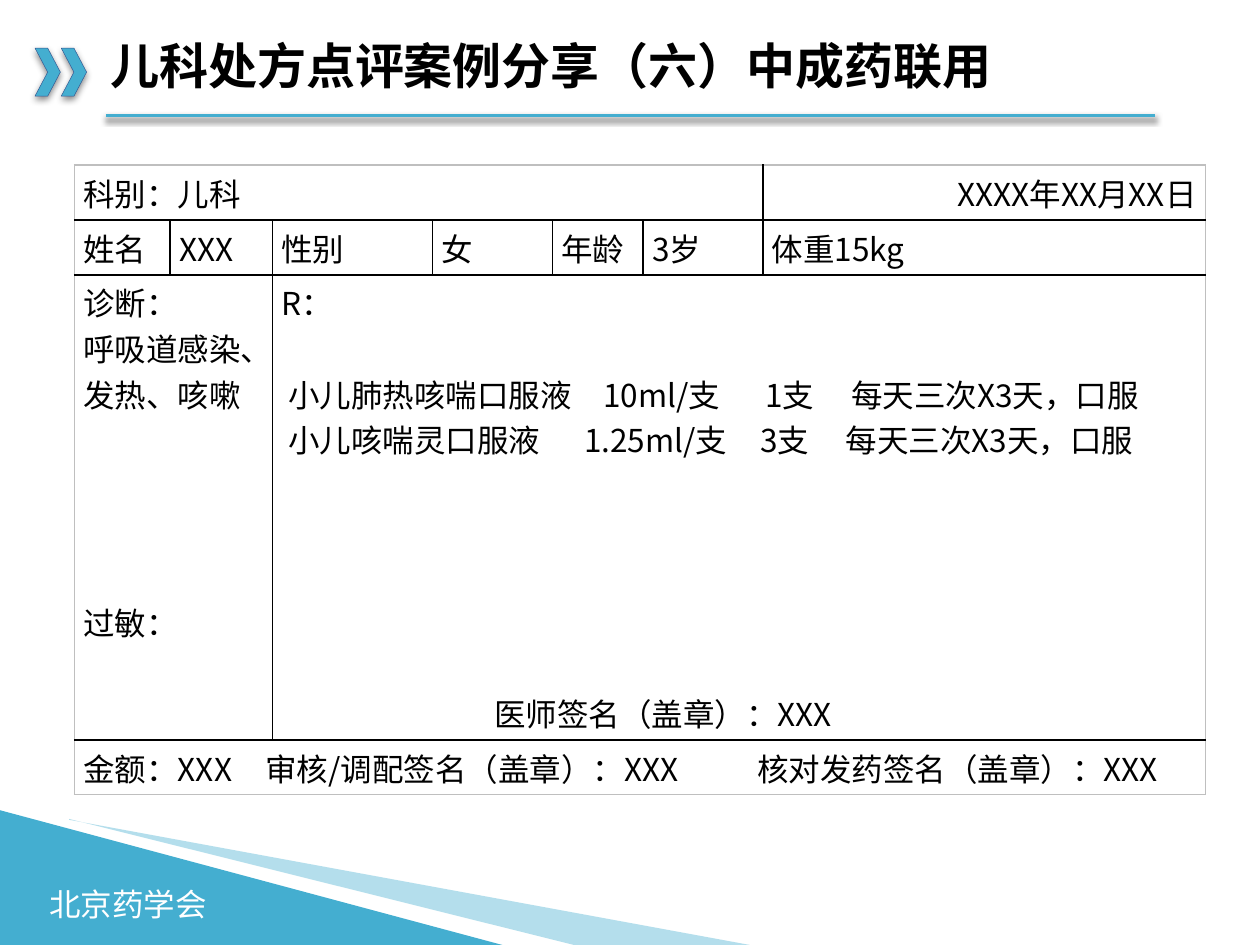
from dataclasses import dataclass

from lxml import etree
from pptx import Presentation
from pptx.dml.color import RGBColor
from pptx.enum.shapes import MSO_CONNECTOR, MSO_SHAPE
from pptx.enum.text import MSO_ANCHOR, MSO_AUTO_SIZE, PP_ALIGN
from pptx.oxml.ns import qn
from pptx.util import Pt

TRIANGLE, CHEVRON = MSO_SHAPE.ISOSCELES_TRIANGLE, MSO_SHAPE.CHEVRON
STRAIGHT = MSO_CONNECTOR.STRAIGHT
MIDDLE = MSO_ANCHOR.MIDDLE
FIT_TEXT = MSO_AUTO_SIZE.SHAPE_TO_FIT_TEXT
LEFT, RIGHT = PP_ALIGN.LEFT, PP_ALIGN.RIGHT
NO_GRID_STYLE = "{2D5ABB26-0587-4C30-8999-92F81FD0307C}"


@dataclass(frozen=True)
class Theme:
    font: str = "Noto Sans CJK SC"
    accent: str = "44AED0"
    chevron_edge: str = "325491"
    ink: str = "000000"
    paper: str = "FFFFFF"
    frame: str = "BFBFBF"
    shade: str = "808080"
    title: int = 28
    body: int = 18
    line_pitch: float = 26.1


THEME = Theme()


def rgb(value):
    return RGBColor.from_string(value)


def add_xml(parent, tag, **attributes):
    return etree.SubElement(parent, qn(tag), {k: str(v) for k, v in attributes.items()})


def add_run(paragraph, text, size=THEME.body, color=THEME.ink, bold=False):
    run = paragraph.add_run()
    run.text = text
    font = run.font
    font.size, font.bold, font.name = Pt(size), bold, THEME.font
    font.color.rgb = rgb(color)
    add_xml(run._r.get_or_add_rPr(), "a:ea", typeface=THEME.font)


def add_shadow(shape, color, alpha, blur, distance):
    """Cast a shadow straight down; call after the line is set."""
    properties = shape._element.spPr
    effects = properties.find(qn("a:effectLst"))
    if effects is None:
        effects = add_xml(properties, "a:effectLst")
    outer = add_xml(effects, "a:outerShdw", blurRad=Pt(blur), dist=Pt(distance),
                    dir=90 * 60000, algn="ctr", rotWithShape=0)
    add_xml(add_xml(outer, "a:srgbClr", val=color), "a:alpha", val=alpha * 1000)


def paint(shape):
    shape.shadow.inherit = False
    shape.fill.solid()
    shape.fill.fore_color.rgb = rgb(THEME.accent)
    shape.line.fill.background()


def add_header(slide, left, top, width, height):
    """Double chevron, title and the rule under it."""
    for offset in (15, 0):
        chevron = slide.shapes.add_shape(
            CHEVRON, Pt(left + offset), Pt(top + 11.5), Pt(14.5), Pt(27.5))
        paint(chevron)
        chevron.line.color.rgb = rgb(THEME.chevron_edge)
        chevron.line.width = Pt(0.25)
        add_shadow(chevron, THEME.ink, 46, 4, 2)

    box = slide.shapes.add_textbox(Pt(left + 36), Pt(top), Pt(width - 36), Pt(47))
    frame = box.text_frame
    frame.word_wrap, frame.vertical_anchor = True, MIDDLE
    title = frame.paragraphs[0]
    title.line_spacing = 0.9
    add_run(title, "儿科处方点评案例分享（六）中成药联用", THEME.title, bold=True)

    base = Pt(top + height)
    rule = slide.shapes.add_connector(
        STRAIGHT, Pt(left + 40.5), base, Pt(left + width - 12), base)
    rule.line.color.rgb = rgb(THEME.accent)
    rule.line.width = Pt(2.25)
    add_shadow(rule, THEME.shade, 100, 3, 2)


def add_footer(slide, left, top, width, height):
    """Corner wedge, pale sliver beside it and the society's name."""
    wedge = slide.shapes.add_shape(TRIANGLE, Pt(left), Pt(top), Pt(287), Pt(height))
    wedge.adjustments[0] = 0
    paint(wedge)

    bottom = top + height
    outline = [(left + x, y) for x, y in
               ((39.5, top + 5.5), (width, bottom), (328, bottom), (39.5, top + 5))]
    start, *others = [(Pt(x), Pt(y)) for x, y in outline]
    builder = slide.shapes.build_freeform(*start)
    builder.add_line_segments(others, close=True)
    sliver = builder.convert_to_shape()
    paint(sliver)
    add_xml(sliver._element.spPr.find(qn("a:solidFill"))[0], "a:alpha", val=40000)

    box = slide.shapes.add_textbox(Pt(left + 21), Pt(top + 39), Pt(105), Pt(29))
    frame = box.text_frame
    frame.word_wrap, frame.auto_size = False, FIT_TEXT
    add_run(frame.paragraphs[0], "北京药学会", color=THEME.paper)


def add_border(cell, side, color, width):
    line = add_xml(cell._tc.get_or_add_tcPr(), f"a:ln{side}", w=Pt(width))
    add_xml(add_xml(line, "a:solidFill"), "a:srgbClr", val=color)


def border_block(table, row, first, last):
    """Grey on the table's outer edge, black on the edges inside it."""
    end_row, end_column = len(table.rows) - 1, len(table.columns) - 1
    outer = {"L": first == 0, "R": last == end_column,
             "T": row == 0, "B": row == end_row}
    for column in range(first, last + 1):
        cell = table.cell(row, column)
        for side, is_outer in outer.items():
            if (side == "L" and column != first) or (
                    side == "R" and column not in (first, last)):
                continue
            add_border(cell, side, THEME.frame if is_outer else THEME.ink,
                       0.75 if is_outer else 1)
        cell.fill.background()


def write_line(paragraph, parts, tabs=(), gap=0, indent=0, align=LEFT):
    """Parts are set at tab stops; gap counts the empty lines above."""
    properties = paragraph._p.get_or_add_pPr()
    if tabs:
        stops = add_xml(properties, "a:tabLst")
        for position in tabs:
            add_xml(stops, "a:tab", pos=Pt(position), algn="l")
    if indent:
        properties.set("marL", str(Pt(indent)))
        properties.set("indent", "0")
    if gap:
        paragraph.space_before = Pt(gap * THEME.line_pitch)
    paragraph.alignment = align
    add_run(paragraph, "\t".join(parts))


def add_prescription(slide, left, top, width, height):
    shares = (0.76, 0.81, 1.27, 0.95, 0.72, 0.95, 3.51)
    row_height = 31.4
    heights = (row_height, row_height, height - 3 * row_height, row_height)
    frame = slide.shapes.add_table(
        len(heights), len(shares), Pt(left), Pt(top), Pt(width), Pt(height))
    table = frame.table
    table.first_row = table.horz_banding = False
    table._tbl.tblPr.find(qn("a:tableStyleId")).text = NO_GRID_STYLE
    for column, share in zip(table.columns, shares):
        column.width = Pt(round(width * share / sum(shares), 2))
    for row, row_size in zip(table.rows, heights):
        row.height = Pt(row_size)

    patient = ("姓名", "XXX", "性别", "女", "年龄", "3岁", "体重15kg")
    diagnosis = [dict(parts=["诊断："]), dict(parts=["呼吸道感染、发热、咳嗽"]),
                 dict(parts=["过敏："], gap=4)]
    medicines = [
        dict(parts=["R："]),
        dict(parts=["", "小儿肺热咳喘口服液", "10ml/支", "1支", "每天三次X3天，口服"],
             tabs=(4, 184, 276.5, 325.5), gap=1),
        dict(parts=["", "小儿咳喘灵口服液", "1.25ml/支", "3支", "每天三次X3天，口服"],
             tabs=(4, 173, 273.5, 322.5)),
        dict(parts=["医师签名（盖章）：XXX"], indent=121.5, gap=5)]
    signatures = dict(parts=["金额：XXX", "审核/调配签名（盖章）：XXX",
                             "核对发药签名（盖章）：XXX"], tabs=(104, 385))
    blocks = [(0, 0, 5, [dict(parts=["科别：儿科"])]),
              (0, 6, 6, [dict(parts=["XXXX年XX月XX日"], align=RIGHT)]),
              *((1, i, i, [dict(parts=[text])]) for i, text in enumerate(patient)),
              (2, 0, 1, diagnosis), (2, 2, 6, medicines), (3, 0, 6, [signatures])]
    for row, first, last, lines in blocks:
        cell = table.cell(row, first)
        if last > first:
            cell.merge(table.cell(row, last))
        cell.margin_left = cell.margin_right = Pt(5.2)
        cell.margin_top = cell.margin_bottom = Pt(2.6)
        for i, line in enumerate(lines):
            text = cell.text_frame
            write_line(text.add_paragraph() if i else text.paragraphs[0], **line)
        border_block(table, row, first, last)


def main():
    deck = Presentation()
    deck.slide_width, deck.slide_height = Pt(720), Pt(540)
    slide = deck.slides.add_slide(deck.slide_layouts[6])
    add_footer(slide, 0, 463, 428.5, 77)
    add_header(slide, 20, 16, 652, 50)
    add_prescription(slide, 42.5, 94.3, 646.5, 360)
    deck.save("out.pptx")


if __name__ == "__main__":
    main()
